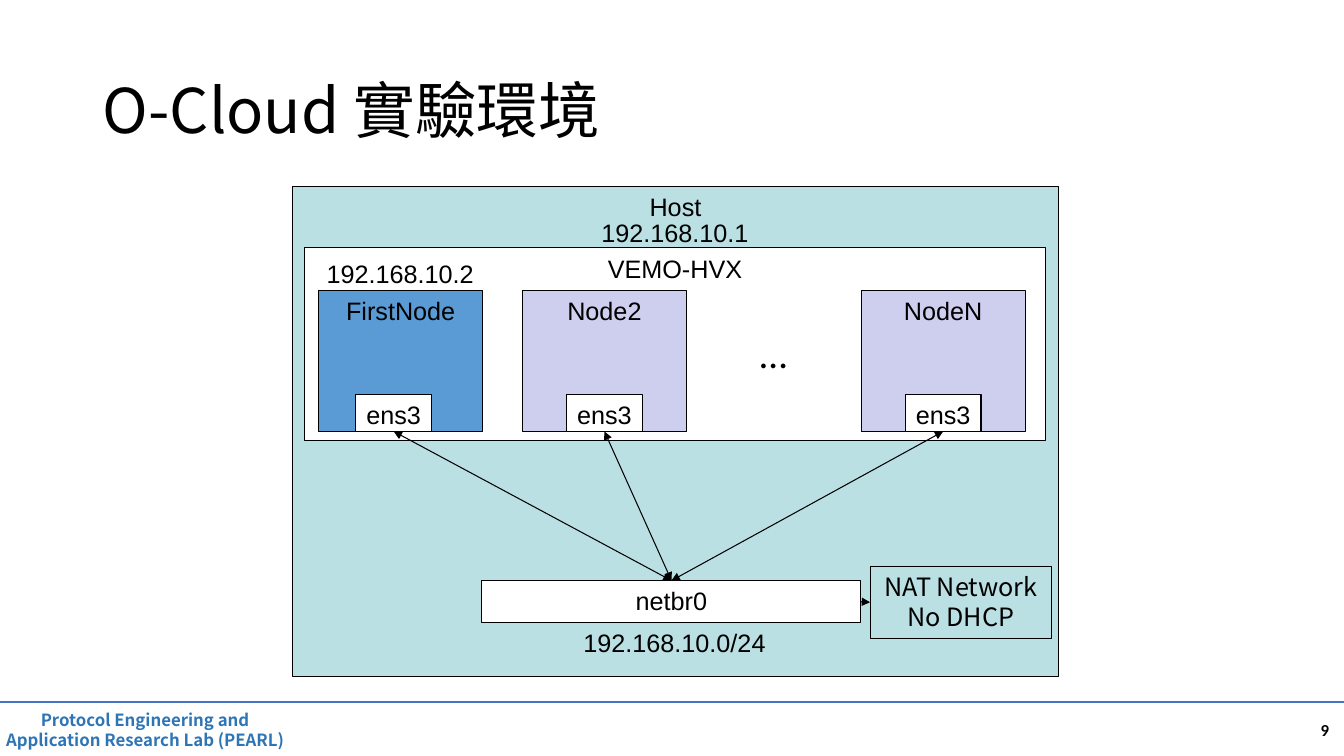
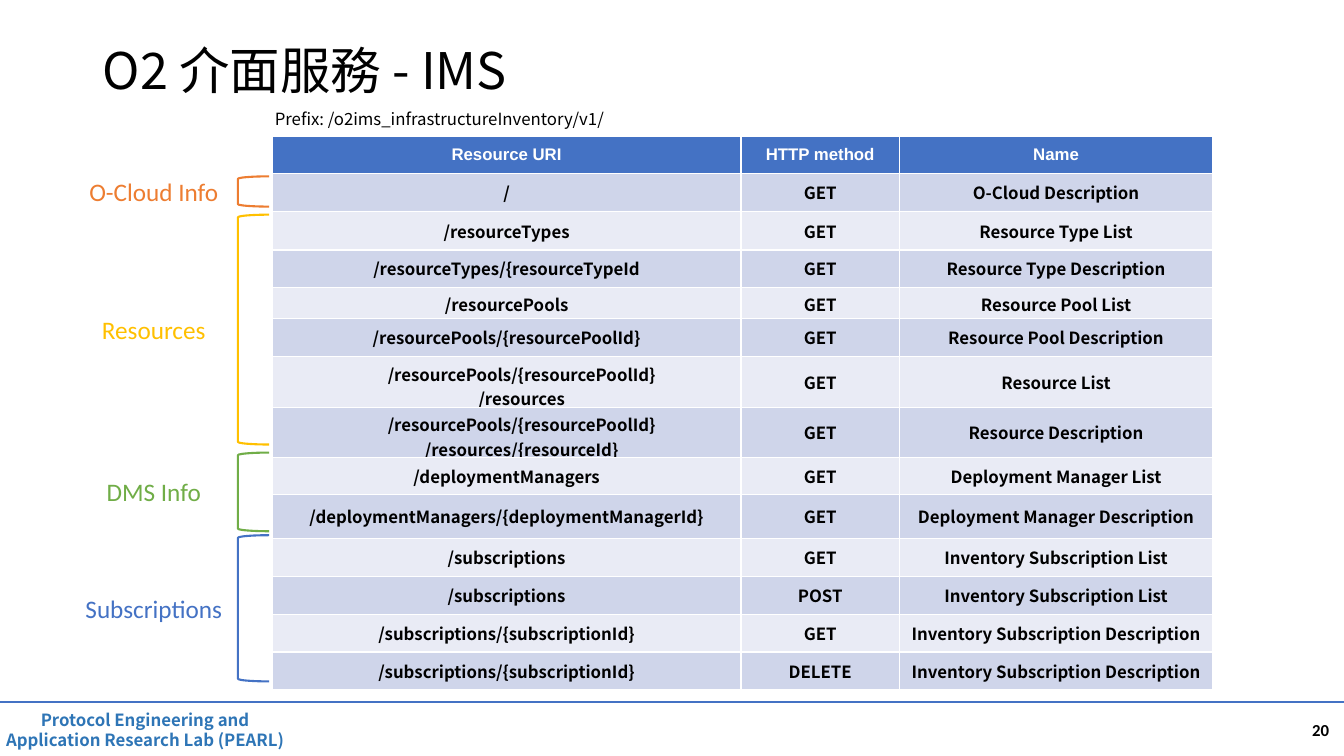
"""Build two slides: the O-Cloud lab network and the O2 IMS service table."""
from lxml.etree import SubElement
from pptx import Presentation
from pptx.dml.color import RGBColor
from pptx.enum.shapes import MSO_CONNECTOR, MSO_SHAPE
from pptx.enum.text import MSO_ANCHOR, PP_ALIGN
from pptx.oxml.ns import qn
from pptx.util import Inches, Pt

COLORS = {
    "text": "000000", "white": "FFFFFF", "rule": "4472C4", "lab": "2E75B6",
    "host": "BBE0E3", "first": "5B9BD5", "node": "CECEEF",
    "header": "4472C4", "odd": "CFD5EA", "even": "E9EBF5",
    "cloud": "ED7D31", "resources": "FFC000", "dms": "70AD47", "subscriptions": "4472C4",
}
PALETTE = {role: RGBColor.from_string(value) for role, value in COLORS.items()}
CJK = "Noto Sans CJK SC"
LABEL = {"size": Pt(18), "name": "Arial"}
NOTE = {"size": Pt(12), "name": CJK}
BOLD_NOTE = {**NOTE, "bold": True}


def write(frame, text, font, color="text", wrap=False, anchor=MSO_ANCHOR.TOP, **layout):
    frame.word_wrap = wrap
    frame.vertical_anchor = anchor
    frame.text = text
    for paragraph in frame.paragraphs:
        for name, value in {"alignment": PP_ALIGN.CENTER, **layout}.items():
            setattr(paragraph, name, value)
        for run in paragraph.runs:
            for name, value in font.items():
                setattr(run.font, name, value)
            run.font.color.rgb = PALETTE[color]
            SubElement(run.font._element, qn("a:ea"), typeface=CJK)


def outline(slide, preset, box, line, weight, fill=None):
    shape = slide.shapes.add_shape(preset, *map(Inches, box))
    shape.shadow.inherit = False
    shape.line.color.rgb = PALETTE[line]
    shape.line.width = Pt(weight)
    if fill:
        shape.fill.solid()
        shape.fill.fore_color.rgb = PALETTE[fill]
    else:
        shape.fill.background()
    return shape


deck = Presentation()
deck.slide_width, deck.slide_height = Inches(13.33), Inches(7.5)

slides = []
for number, title, title_top, title_size in [
    ("9", "O-Cloud 實驗環境", 0.4, 44),
    ("20", "O2 介面服務 - IMS", 0, 36),
]:
    slide = deck.slides.add_slide(deck.slide_layouts[6])
    slides.append(slide)
    rule = slide.shapes.add_connector(
        MSO_CONNECTOR.STRAIGHT, 0, Inches(6.96), deck.slide_width, Inches(6.96))
    rule.line.color.rgb = PALETTE["rule"]
    rule.line.width = Pt(1.5)
    SubElement(rule._element.spPr, qn("a:effectLst"))
    for box, text, font, options in [
        ((10.28, 7.04, 3, 0.4), number, {"size": Pt(12), "name": "Calibri", "bold": True},
         {"anchor": MSO_ANCHOR.MIDDLE, "alignment": PP_ALIGN.RIGHT}),
        ((-0.12, 6.99, 3.12, 0.5), "Protocol Engineering and Application Research Lab (PEARL)",
         BOLD_NOTE, {"color": "lab"}),
        ((0.92, title_top, 11.5, 1.45), title, {"size": Pt(title_size), "name": CJK},
         {"anchor": MSO_ANCHOR.MIDDLE, "alignment": PP_ALIGN.LEFT, "line_spacing": 0.9}),
    ]:
        area = slide.shapes.add_textbox(*map(Inches, box))
        write(area.text_frame, text, font, wrap=True, **options)

network, services = slides

for box, text, fill in [
    ((2.9, 1.85, 7.6, 4.86), "Host", "host"),
    ((3.02, 2.46, 7.35, 1.91), "VEMO-HVX", "white"),
]:
    container = outline(network, MSO_SHAPE.RECTANGLE, box, "text", 0.75, fill)
    write(container.text_frame, text, LABEL)

ports = []
for left, text, fill, port_offset in [
    (3.16, "FirstNode", "first", 0.37),
    (5.18, "Node2", "node", 0.44),
    (8.54, "NodeN", "node", 0.44),
]:
    node = outline(network, MSO_SHAPE.RECTANGLE, (left, 2.88, 1.63, 1.4), "text", 0.75, fill)
    write(node.text_frame, text, LABEL)
    port = outline(network, MSO_SHAPE.RECTANGLE, (left + port_offset, 3.91, 0.75, 0.37),
                   "text", 0.75, "white")
    write(port.text_frame, "ens3", LABEL)
    ports.append(port)

bridge = outline(network, MSO_SHAPE.RECTANGLE, (4.78, 5.76, 3.76, 0.42), "text", 0.75, "white")
write(bridge.text_frame, "netbr0", LABEL)
nat = outline(network, MSO_SHAPE.RECTANGLE, (8.63, 5.62, 1.8, 0.71), "text", 0.75)
write(nat.text_frame, "NAT Network\nNo DHCP", {"size": Pt(18), "name": CJK})

links = [(port, 2, bridge, 0, ("headEnd", "tailEnd")) for port in ports]
links.append((bridge, 3, nat, 1, ("tailEnd",)))
for source, source_side, target, target_side, arrowheads in links:
    link = network.shapes.add_connector(MSO_CONNECTOR.STRAIGHT, 0, 0, 0, 0)
    link.begin_connect(source, source_side)
    link.end_connect(target, target_side)
    link.line.color.rgb = PALETTE["text"]
    link.line.width = Pt(0.75)
    for arrowhead in arrowheads:
        SubElement(link.line._get_or_add_ln(), qn(f"a:{arrowhead}"), type="triangle")
    SubElement(link._element.spPr, qn("a:effectLst"))

for box, text, font, anchor in [
    ((5.64, 6.17, 2.1, 0.4), "192.168.10.0/24", LABEL, MSO_ANCHOR.TOP),
    ((3.04, 2.51, 1.86, 0.4), "192.168.10.2", LABEL, MSO_ANCHOR.TOP),
    ((5.83, 2.11, 1.73, 0.4), "192.168.10.1", LABEL, MSO_ANCHOR.TOP),
    ((7.09, 3.22, 1.16, 0.57), "…", {"size": Pt(28), "name": "Calibri"}, MSO_ANCHOR.MIDDLE),
]:
    caption = network.shapes.add_textbox(*map(Inches, box))
    write(caption.text_frame, text, font, anchor=anchor)

endpoints = [
    (0.37, "Resource URI", "HTTP method", "Name"),
    (0.38, "/", "GET", "O-Cloud Description"),
    (0.38, "/resourceTypes", "GET", "Resource Type List"),
    (0.37, "/resourceTypes/{resourceTypeId", "GET", "Resource Type Description"),
    (0.31, "/resourcePools", "GET", "Resource Pool List"),
    (0.38, "/resourcePools/{resourcePoolId}", "GET", "Resource Pool Description"),
    (0.43, "/resourcePools/{resourcePoolId}\n/resources", "GET", "Resource List"),
    (0.43, "/resourcePools/{resourcePoolId}\n/resources/{resourceId}", "GET",
     "Resource Description"),
    (0.37, "/deploymentManagers", "GET", "Deployment Manager List"),
    (0.43, "/deploymentManagers/{deploymentManagerId}", "GET", "Deployment Manager Description"),
    (0.38, "/subscriptions", "GET", "Inventory Subscription List"),
    (0.38, "/subscriptions", "POST", "Inventory Subscription List"),
    (0.37, "/subscriptions/{subscriptionId}", "GET", "Inventory Subscription Description"),
    (0.37, "/subscriptions/{subscriptionId}", "DELETE", "Inventory Subscription Description"),
]
catalog = services.shapes.add_table(
    len(endpoints), 3, Inches(2.7), Inches(1.35), Inches(9.33), Inches(5.35)).table
for column, width in zip(catalog.columns, (4.65, 1.57, 3.11)):
    column.width = Inches(width)
for index, (height, *texts) in enumerate(endpoints):
    catalog.rows[index].height = Inches(height)
    for cell, text in zip(catalog.rows[index].cells, texts):
        cell.fill.solid()
        cell.fill.fore_color.rgb = PALETTE[
            "header" if index == 0 else "odd" if index % 2 else "even"]
        font = {**BOLD_NOTE, "name": "Arial"} if index == 0 else BOLD_NOTE
        write(cell.text_frame, text, font, "white" if index == 0 else "text", wrap=True)
        cell.vertical_anchor = MSO_ANCHOR.MIDDLE
        if "\n" in text:
            for paragraph in cell.text_frame.paragraphs:
                paragraph._p.get_or_add_pPr().set("indent", str(Inches(0.3)))

prefix = services.shapes.add_textbox(*map(Inches, (2.53, 1.03, 3.66, 0.3)))
write(prefix.text_frame, "Prefix: /o2ims_infrastructureInventory/v1/", NOTE)

for text, color, top, height in [
    ("O-Cloud Info", "cloud", 1.75, 0.3),
    ("Resources", "resources", 2.13, 2.28),
    ("DMS Info", "dms", 4.49, 0.78),
    ("Subscriptions", "subscriptions", 5.31, 1.45),
]:
    outline(services, MSO_SHAPE.LEFT_BRACKET, (2.36, top, 0.31, height), color, 1.5)
    group_name = services.shapes.add_textbox(
        *map(Inches, (0.7, top + height / 2 - 0.2, 1.65, 0.4)))
    write(group_name.text_frame, text, {"size": Pt(18), "name": "Calibri"}, color)

deck.save("out.pptx")
